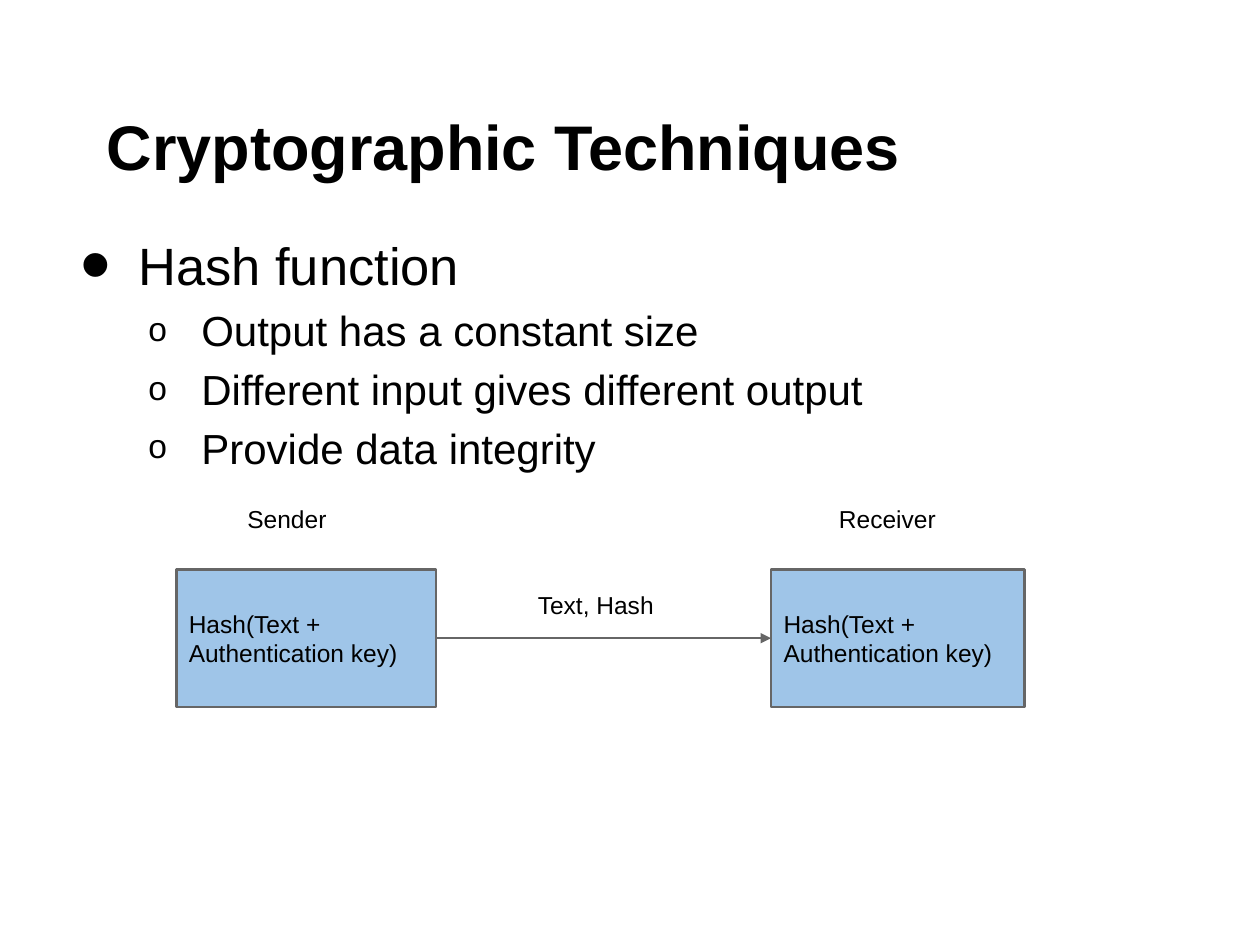
from lxml import etree
from pptx import Presentation
from pptx.dml.color import RGBColor
from pptx.enum import shapes, text
from pptx.oxml import ns
from pptx.util import Inches, Pt

BLACK = RGBColor(0x00, 0x00, 0x00)
BLUE = RGBColor(0x9F, 0xC5, 0xE8)
GRAY = RGBColor(0x66, 0x66, 0x66)
FONT = "Arial"

TITLE = "Cryptographic Techniques"
POINTS = [
    (0, "Hash function"),
    (1, "Output has a constant size"),
    (1, "Different input gives different output"),
    (1, "Provide data integrity"),
]
LEVELS = [
    dict(size=30, before=6, margin=0.5, indent=-0.46, bullet="•", percent=167),
    dict(size=24, before=4.8, margin=1, indent=-0.42, bullet="o", percent=80),
]
HASH = "Hash(Text + Authentication key)"
PARTIES = [("Sender", 1.4, 2.06), ("Receiver", 6.12, 2.01)]
MESSAGE = "Text, Hash"
BOX_TOP, BOX_HEIGHT = 4.52, 1.09
LABEL_TOP, LABEL_WIDTH, LABEL_HEIGHT = 3.9, 1.13, 0.5


def add_child(parent, tag, **attributes):
    return etree.SubElement(parent, ns.qn(tag), attributes)


def style(paragraph, size, bold=False):
    paragraph.alignment = text.PP_ALIGN.LEFT
    for run in paragraph.runs:
        run.font.name = FONT
        run.font.size = Pt(size)
        run.font.bold = bold
        run.font.color.rgb = BLACK


def write(shape, content, size=14, anchor=text.MSO_ANCHOR.TOP, bold=False):
    frame = shape.text_frame
    frame.word_wrap = True
    frame.vertical_anchor = anchor
    frame.margin_left = frame.margin_right = Inches(0.1)
    frame.margin_top = frame.margin_bottom = Inches(0.1)
    frame.text = content
    for paragraph in frame.paragraphs:
        style(paragraph, size, bold)
    return frame


def add_text(slide, box, content, **options):
    return write(slide.shapes.add_textbox(*map(Inches, box)), content, **options)


def set_bullet(paragraph, level):
    look = LEVELS[level]
    paragraph.level = level
    paragraph.space_before = Pt(look["before"])
    style(paragraph, look["size"])
    props = paragraph._p.get_or_add_pPr()
    props.set("marL", str(Inches(look["margin"])))
    props.set("indent", str(Inches(look["indent"])))
    add_child(add_child(props, "a:buClr"), "a:srgbClr", val=str(BLACK))
    add_child(props, "a:buSzPct", val=str(look["percent"] * 1000))
    add_child(props, "a:buFont", typeface=FONT)
    add_child(props, "a:buChar", char=look["bullet"])


def add_party(slide, name, left, width):
    box = slide.shapes.add_shape(
        shapes.MSO_SHAPE.RECTANGLE,
        *map(Inches, (left, BOX_TOP, width, BOX_HEIGHT)))
    box.shadow.inherit = False
    box.fill.solid()
    box.fill.fore_color.rgb = BLUE
    box.line.color.rgb = GRAY
    box.line.width = Pt(1.5)
    write(box, HASH, anchor=text.MSO_ANCHOR.MIDDLE)
    label_left = left + (width - LABEL_WIDTH) / 2
    add_text(slide, (label_left, LABEL_TOP, LABEL_WIDTH, LABEL_HEIGHT), name)
    return box


def add_arrow(slide, start, end):
    arrow = slide.shapes.add_connector(shapes.MSO_CONNECTOR.STRAIGHT, 0, 0, 0, 0)
    arrow.begin_connect(start, 3)
    arrow.end_connect(end, 1)
    arrow.line.color.rgb = GRAY
    arrow.line.width = Pt(1.5)
    add_child(arrow.line._get_or_add_ln(), "a:tailEnd", type="triangle")
    add_child(arrow._element.spPr, "a:effectLst")


def main():
    deck = Presentation()
    deck.slide_width, deck.slide_height = Inches(10), Inches(7.5)
    slide = deck.slides.add_slide(deck.slide_layouts[6])

    title = add_text(slide, (0.5, 0.3, 9, 1.25), TITLE, size=36,
                     anchor=text.MSO_ANCHOR.BOTTOM, bold=True)
    title.paragraphs[0]._p.get_or_add_pPr().set("indent", str(Inches(0.25)))

    body = add_text(slide, (0.5, 1.75, 9, 5.43),
                    "\n".join(content for _, content in POINTS))
    for paragraph, (level, _) in zip(body.paragraphs, POINTS):
        set_bullet(paragraph, level)

    sender, receiver = [add_party(slide, *party) for party in PARTIES]
    add_arrow(slide, sender, receiver)
    add_text(slide, (4.17, 4.58, 1.83, 0.42), MESSAGE)

    deck.save("out.pptx")


if __name__ == "__main__":
    main()
